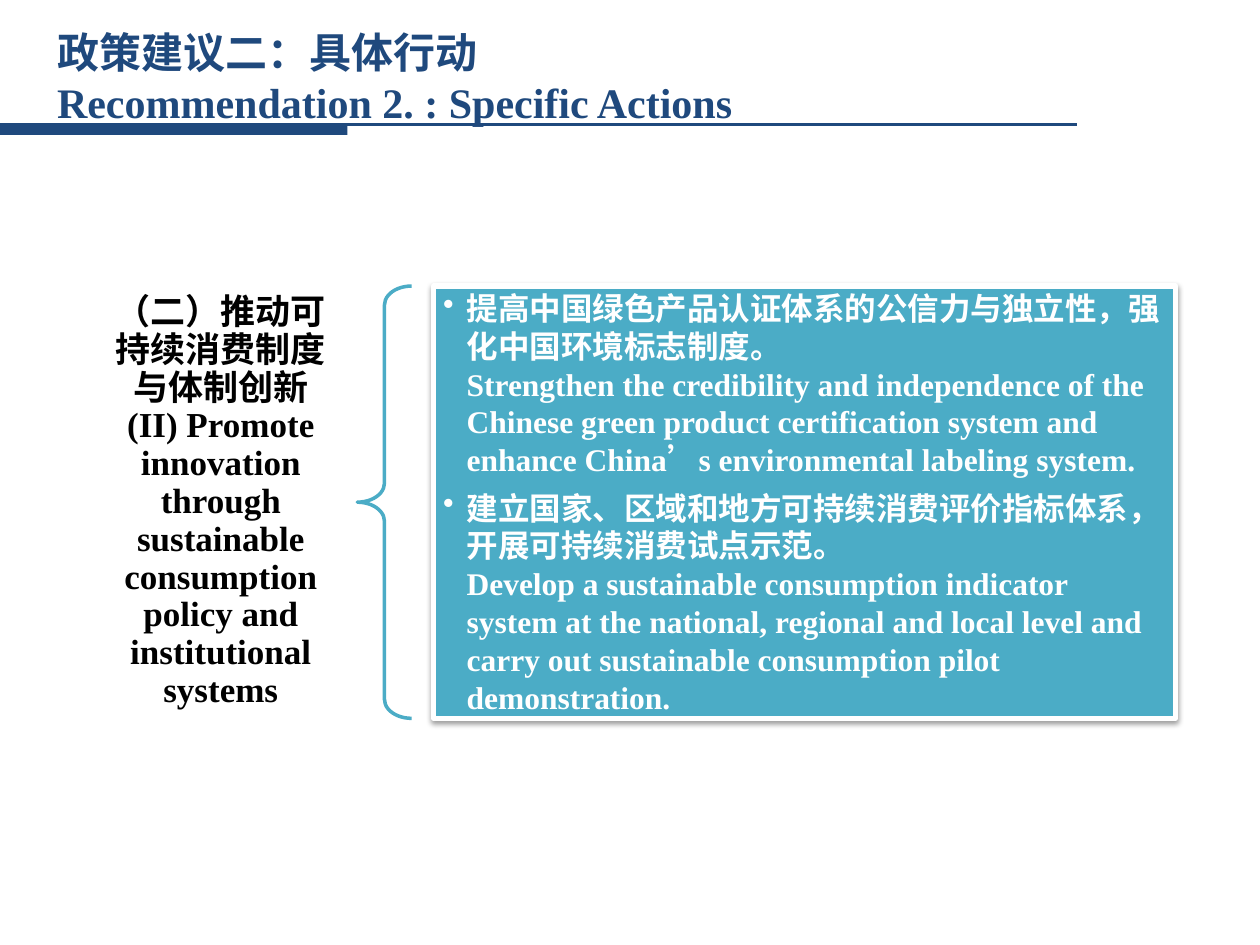
import dataclasses

import pptx
import pptx.dml.color
import pptx.enum.shapes
import pptx.enum.text
import pptx.oxml
import pptx.util

Pt = pptx.util.Pt
SHAPES = pptx.enum.shapes.MSO_SHAPE
ALIGN = pptx.enum.text.PP_ALIGN
DRAWING = 'xmlns:a="http://schemas.openxmlformats.org/drawingml/2006/main"'


@dataclasses.dataclass(frozen=True)
class Theme:
    navy: str = "1F497D"
    teal: str = "4BACC6"
    white: str = "FFFFFF"
    black: str = "000000"
    serif: str = "Times New Roman"
    sans: str = "Calibri"
    title_size: int = 24
    topic_size: int = 20
    action_size: int = 18


THEME = Theme()

TITLE = ("政策建议二：具体行动", "Recommendation 2. : Specific Actions")
TOPIC = (
    "（二）推动可持续消费制度与体制创新\v"
    "(II) Promote innovation through sustainable consumption policy "
    "and institutional systems"
)
ACTIONS = (
    "提高中国绿色产品认证体系的公信力与独立性，强化中国环境标志制度。\v"
    "Strengthen the credibility and independence of the Chinese green product "
    "certification system and enhance China’s environmental labeling system.",
    "建立国家、区域和地方可持续消费评价指标体系，开展可持续消费试点示范。\v"
    "Develop a sustainable consumption indicator system at the national, "
    "regional and local level and carry out sustainable consumption pilot "
    "demonstration.",
)


def rgb(color):
    return pptx.dml.color.RGBColor.from_string(color)


def format_runs(paragraph, size, color, font_name):
    for run in paragraph.runs:
        run.font.size = Pt(size)
        run.font.bold = True
        run.font.color.rgb = rgb(color)
        run.font.name = font_name


def add_text_box(slide, box, insets):
    """Add a wrapping, vertically centred text box; insets are (side, end)."""
    frame = slide.shapes.add_textbox(*map(Pt, box)).text_frame
    frame.word_wrap = True
    frame.vertical_anchor = pptx.enum.text.MSO_ANCHOR.MIDDLE
    frame.margin_left = frame.margin_right = Pt(insets[0])
    frame.margin_top = frame.margin_bottom = Pt(insets[1])
    return frame


def add_bullet(paragraph, indent):
    properties = paragraph._p.get_or_add_pPr()
    properties.set("marL", str(Pt(indent)))
    properties.set("indent", str(-Pt(indent)))
    properties.append(pptx.oxml.parse_xml(f'<a:buChar {DRAWING} char="•"/>'))


def add_header_rule(slide, box):
    """Draw a thin line along the top of the box and a bar under its start."""
    left, top, width, height = box
    line = slide.shapes.add_connector(
        pptx.enum.shapes.MSO_CONNECTOR.STRAIGHT,
        Pt(left), Pt(top), Pt(left + width), Pt(top))
    line.line.color.rgb = rgb(THEME.navy)
    line.line.width = Pt(1.5)
    line._element.spPr.append(pptx.oxml.parse_xml(f"<a:effectLst {DRAWING}/>"))

    bar = slide.shapes.add_shape(
        SHAPES.RECTANGLE, Pt(left), Pt(top), Pt(198.5), Pt(height))
    bar.shadow.inherit = False
    bar.fill.solid()
    bar.fill.fore_color.rgb = rgb(THEME.navy)
    bar.line.fill.background()


def add_title(slide, box):
    frame = add_text_box(slide, box, (7.2, 3.6))
    frame.text = "\n".join(TITLE)
    for paragraph, font_name in zip(frame.paragraphs, (THEME.sans, THEME.serif)):
        format_runs(paragraph, THEME.title_size, THEME.navy, font_name)


def add_topic(slide, box):
    frame = add_text_box(slide, box, (11.5, 4.3))
    frame.text = TOPIC
    paragraph = frame.paragraphs[0]
    paragraph.alignment = ALIGN.CENTER
    paragraph.line_spacing = 0.9
    format_runs(paragraph, THEME.topic_size, THEME.black, THEME.serif)


def add_brace(slide, box):
    brace = slide.shapes.add_shape(SHAPES.LEFT_BRACE, *map(Pt, box))
    brace.shadow.inherit = False
    brace.adjustments[0] = 0.35
    brace.adjustments[1] = 0.5
    brace.fill.background()
    brace.line.color.rgb = rgb(THEME.teal)
    brace.line.width = Pt(2)


def add_actions(slide, box):
    panel = slide.shapes.add_shape(SHAPES.RECTANGLE, *map(Pt, box))
    panel.fill.solid()
    panel.fill.fore_color.rgb = rgb(THEME.teal)
    panel.line.color.rgb = rgb(THEME.white)
    panel.line.width = Pt(3)
    panel._element.spPr.append(pptx.oxml.parse_xml(
        f'<a:effectLst {DRAWING}><a:outerShdw blurRad="{Pt(3.1)}" '
        f'dist="{Pt(1.6)}" dir="5400000" rotWithShape="0">'
        f'<a:srgbClr val="{THEME.black}"><a:alpha val="38000"/></a:srgbClr>'
        '</a:outerShdw></a:effectLst>'))

    frame = add_text_box(slide, box, (5.3, 5))
    frame.text = "\n".join(ACTIONS)
    for paragraph in frame.paragraphs:
        paragraph.level = 1
        paragraph.alignment = ALIGN.LEFT
        paragraph.space_after = Pt(6)
        add_bullet(paragraph, 13.5)
        format_runs(paragraph, THEME.action_size, THEME.white, THEME.serif)


def add_topic_with_actions(slide, box):
    """Place topic, brace and action panel side by side in the box."""
    left, top, width, height = box
    topic_width, brace_width, gap = 156, 31, 12.7
    panel_left = left + topic_width + brace_width + gap
    add_topic(slide, (left, top, topic_width, height))
    add_brace(slide, (left + topic_width, top, brace_width, height))
    add_actions(slide, (panel_left, top, left + width - panel_left, height))


def main():
    presentation = pptx.Presentation()
    presentation.slide_width = Pt(720)
    presentation.slide_height = Pt(540)
    slide = presentation.slides.add_slide(presentation.slide_layouts[6])
    add_header_rule(slide, (0, 71.3, 615.2, 5.8))
    add_topic_with_actions(slide, (48.2, 163.5, 623.6, 247))
    add_title(slide, (25.5, 21.6, 601.2, 44.6))
    presentation.save("out.pptx")


if __name__ == "__main__":
    main()
